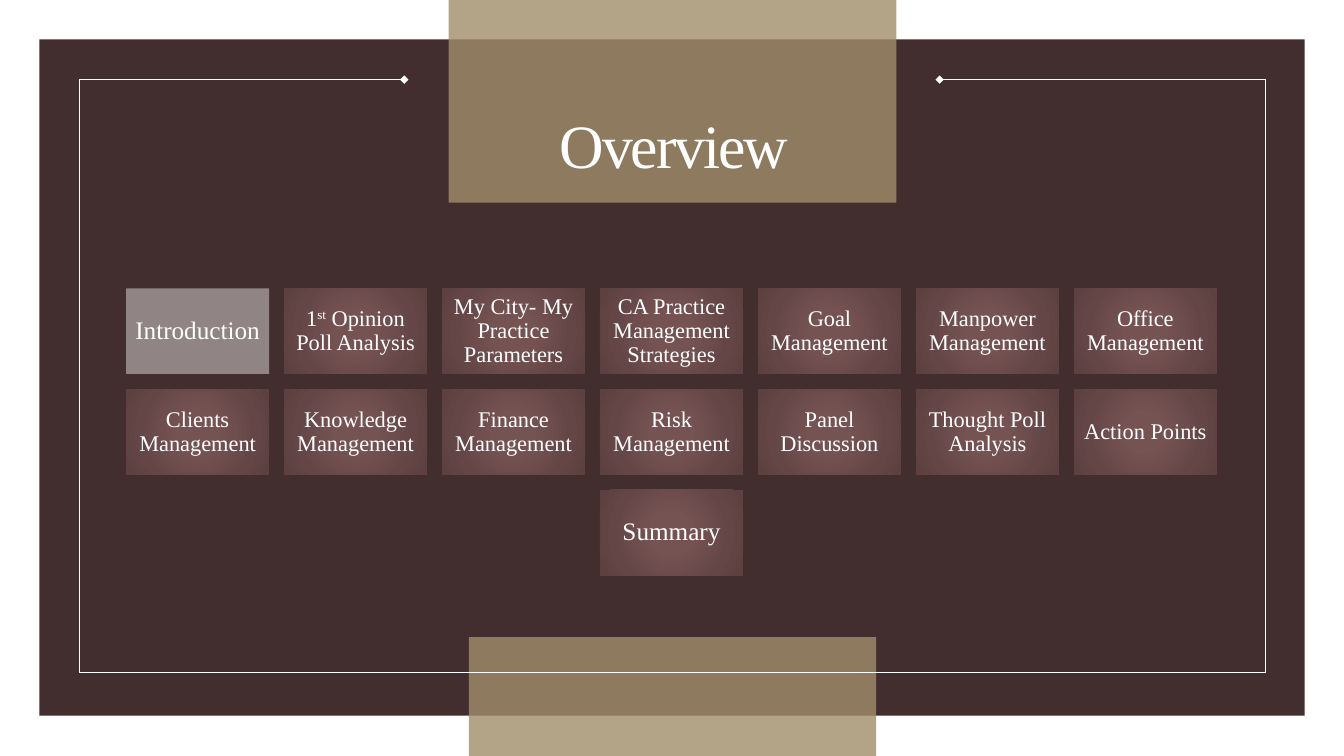
"""Build the Overview agenda slide with its framed panel and grid of topic tiles."""
from dataclasses import dataclass

from lxml.etree import SubElement
from pptx import Presentation
from pptx.dml.color import RGBColor
from pptx.enum.shapes import MSO_SHAPE
from pptx.enum.text import MSO_ANCHOR, MSO_AUTO_SIZE, PP_ALIGN
from pptx.oxml import parse_xml
from pptx.oxml.ns import nsdecls, qn
from pptx.shapes.autoshape import Shape
from pptx.slide import Slide
from pptx.text.text import _Paragraph as Paragraph
from pptx.util import Inches, Pt


@dataclass(frozen=True)
class Theme:
    font: str = "Times New Roman"
    white: str = "FFFFFF"
    panel: str = "422E2E"
    tan: str = "A28E6A"
    current: str = "918485"
    glow: tuple[tuple[int, str], ...] = (
        (0, "765353"), (23, "765353"), (69, "644646"), (97, "5D4141"))
    title_size: int = 44
    large_size: int = 18
    small_size: int = 16


@dataclass(frozen=True)
class Block:
    left: float
    top: float
    width: float
    height: float
    color: str
    opacity: int = 100


@dataclass(frozen=True)
class Topic:
    runs: tuple[str, ...]
    size: int = Theme.small_size
    current: bool = False


THEME = Theme()
BLOCKS = (
    Block(0.39, 0.39, 12.55, 6.71, THEME.panel),
    Block(4.45, 0, 4.44, 2.01, THEME.tan, 80),
    Block(4.65, 6.32, 4.04, 1.18, THEME.tan, 80),
)
FRAME = ((9.32, 0.79), (12.55, 0.79), (12.55, 6.67),
         (0.79, 6.67), (0.79, 0.79), (4.01, 0.79))
TOPIC_ROWS = (
    (
        Topic(("Introduction",), THEME.large_size, True),
        Topic(("1", "st", " Opinion Poll Analysis")),
        Topic(("My City- My Practice Parameters",)),
        Topic(("CA Practice Management Strategies",)),
        Topic(("Goal Management",)),
        Topic(("Manpower Management",)),
        Topic(("Office Management",)),
    ),
    (
        Topic(("Clients Management",)),
        Topic(("Knowledge Management",)),
        Topic(("Finance Management",)),
        Topic(("Risk Management",)),
        Topic(("Panel Discussion",)),
        Topic(("Thought Poll Analysis",)),
        Topic(("Action Points",)),
    ),
    (Topic(("Summary",), THEME.large_size),),
)
GRID_LEFT, GRID_RIGHT, GRID_TOP = 1.25, 12.07, 2.86
TILE_WIDTH, TILE_HEIGHT = 1.42, 0.85
COLUMNS = len(TOPIC_ROWS[0])
COLUMN_STEP = (GRID_RIGHT - GRID_LEFT - TILE_WIDTH) / (COLUMNS - 1)
ROW_STEP = 1.0


def add_rectangle(slide: Slide, left: float, top: float, width: float, height: float) -> Shape:
    shape = slide.shapes.add_shape(
        MSO_SHAPE.RECTANGLE, Inches(left), Inches(top), Inches(width), Inches(height))
    shape.shadow.inherit = False
    shape.line.fill.background()
    return shape


def fill_solid(shape: Shape, color: str, opacity: int = 100) -> None:
    shape.fill.solid()
    shape.fill.fore_color.rgb = RGBColor.from_string(color)
    if opacity < 100:
        color_element = shape._element.spPr.find(f".//{qn('a:srgbClr')}")
        SubElement(color_element, qn("a:alpha")).set("val", str(opacity * 1000))


def fill_glow(shape: Shape) -> None:
    stops = "".join(
        f'<a:gs pos="{position * 1000}"><a:srgbClr val="{color}"/></a:gs>'
        for position, color in THEME.glow)
    gradient = parse_xml(
        f'<a:gradFill {nsdecls("a")} rotWithShape="1"><a:gsLst>{stops}</a:gsLst>'
        '<a:path path="circle"><a:fillToRect l="50000" t="50000" r="50000" b="50000"/>'
        '</a:path></a:gradFill>')
    shape._element.spPr.find(qn("a:prstGeom")).addnext(gradient)


def format_paragraph(paragraph: Paragraph, size: int) -> None:
    paragraph.alignment = PP_ALIGN.CENTER
    paragraph.line_spacing = 0.9
    for run in paragraph.runs:
        run.font.name = THEME.font
        run.font.size = Pt(size)
        run.font.color.rgb = RGBColor.from_string(THEME.white)


def add_block(slide: Slide, block: Block) -> None:
    shape = add_rectangle(slide, block.left, block.top, block.width, block.height)
    fill_solid(shape, block.color, block.opacity)


def add_frame(slide: Slide) -> None:
    points = [(Inches(x), Inches(y)) for x, y in FRAME]
    builder = slide.shapes.build_freeform(*points[0])
    builder.add_line_segments(points[1:], close=False)
    frame = builder.convert_to_shape()
    frame.shadow.inherit = False
    frame.fill.background()
    frame.line.color.rgb = RGBColor.from_string(THEME.white)
    frame.line.width = Pt(1)
    line = frame._element.spPr.find(qn("a:ln"))
    for end in ("a:headEnd", "a:tailEnd"):
        SubElement(line, qn(end)).set("type", "diamond")


def set_title(slide: Slide, text: str) -> None:
    title = slide.shapes.title
    title.left, title.top = Inches(4.49), Inches(0.39)
    title.width, title.height = Inches(4.39), Inches(1.46)
    text_frame = title.text_frame
    text_frame.text = text
    text_frame.word_wrap = True
    text_frame.auto_size = MSO_AUTO_SIZE.NONE
    text_frame.vertical_anchor = MSO_ANCHOR.BOTTOM
    paragraph = text_frame.paragraphs[0]
    format_paragraph(paragraph, THEME.title_size)
    paragraph.runs[0].font._element.set("spc", "-150")
    slide.shapes._spTree.append(title._element)


def add_topic(slide: Slide, topic: Topic, left: float, top: float) -> None:
    tile = add_rectangle(slide, left, top, TILE_WIDTH, TILE_HEIGHT)
    if topic.current:
        fill_solid(tile, THEME.current)
    else:
        fill_glow(tile)
    text_frame = tile.text_frame
    text_frame.word_wrap = True
    text_frame.vertical_anchor = MSO_ANCHOR.MIDDLE
    text_frame.margin_left = text_frame.margin_right = Inches(0.07)
    text_frame.margin_top = text_frame.margin_bottom = Inches(0.07)
    paragraph = text_frame.paragraphs[0]
    for text in topic.runs:
        paragraph.add_run().text = text
    format_paragraph(paragraph, topic.size)
    for raised_run in paragraph.runs[1::2]:
        raised_run.font._element.set("baseline", "30000")


def main() -> None:
    presentation = Presentation()
    presentation.slide_width = Inches(13.33)
    presentation.slide_height = Inches(7.5)
    slide = presentation.slides.add_slide(presentation.slide_layouts.get_by_name("Title Only"))
    for block in BLOCKS:
        add_block(slide, block)
    add_frame(slide)
    set_title(slide, "Overview")
    for row, topics in enumerate(TOPIC_ROWS):
        first_column = (COLUMNS - len(topics)) / 2
        for column, topic in enumerate(topics):
            left = GRID_LEFT + (first_column + column) * COLUMN_STEP
            add_topic(slide, topic, left, GRID_TOP + row * ROW_STEP)
    presentation.save("out.pptx")


if __name__ == "__main__":
    main()
